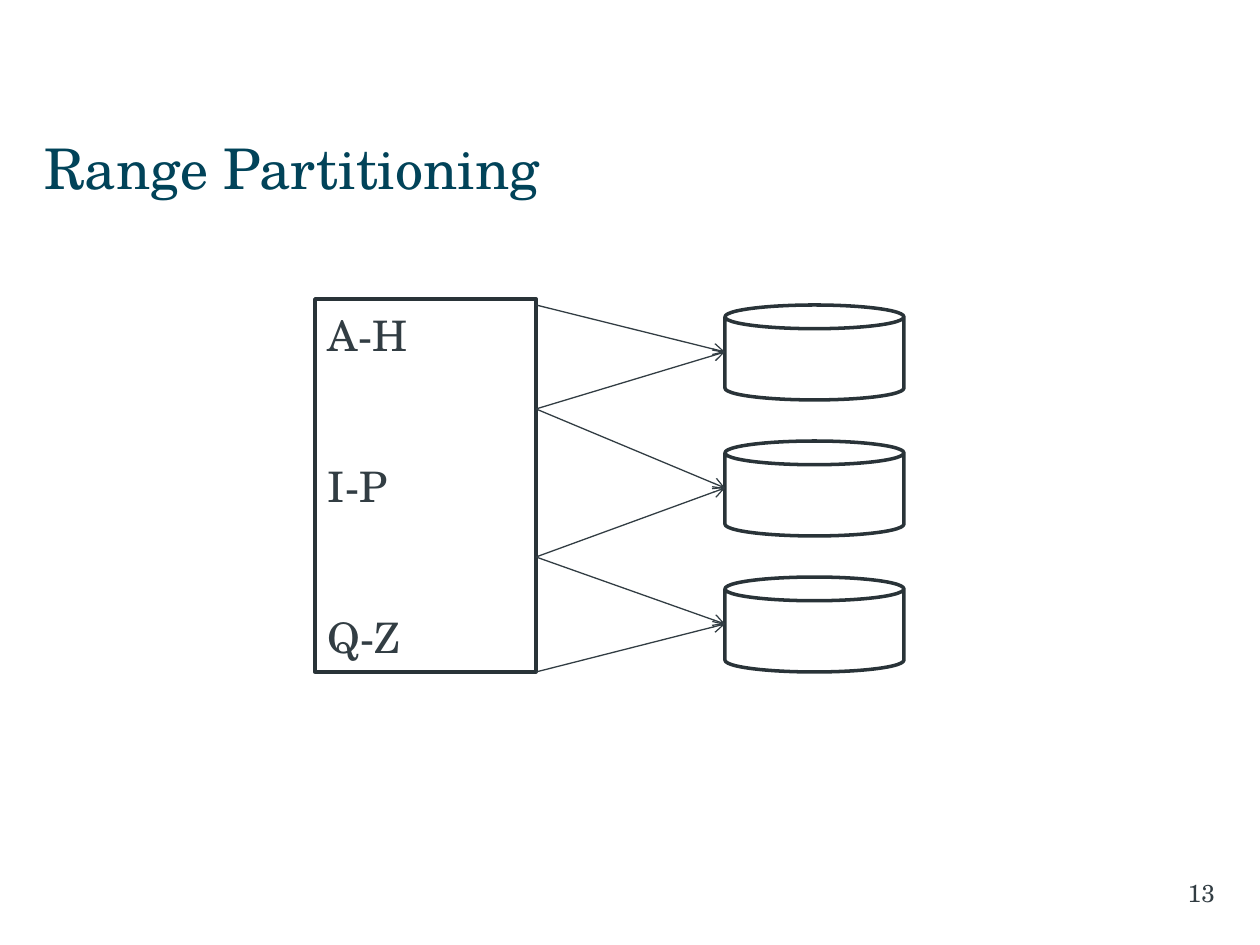
from dataclasses import dataclass
from itertools import pairwise

from lxml.etree import SubElement
from pptx import Presentation
from pptx.dml.color import RGBColor
from pptx.enum.shapes import MSO_CONNECTOR, MSO_SHAPE
from pptx.enum.text import MSO_ANCHOR, MSO_AUTO_SIZE, PP_ALIGN
from pptx.oxml.ns import qn
from pptx.shapes.autoshape import Shape
from pptx.slide import Slide
from pptx.util import Emu, Pt

PIXELS_PER_INCH = 126
FONT = "TeX Gyre Schola"
INK = "323D43"
OUTLINE = "293338"
TITLE_COLOR = "014359"


@dataclass(frozen=True)
class Box:
    left: int
    top: int
    width: int
    height: int

    @property
    def right(self) -> int:
        return self.left + self.width

    @property
    def middle(self) -> int:
        return self.top + self.height // 2


def px(length: int) -> Emu:
    return Emu(round(length * 914400 / PIXELS_PER_INCH))


def color(value: str) -> RGBColor:
    return RGBColor.from_string(value)


def place(shape: Shape, box: Box) -> None:
    shape.left, shape.top = px(box.left), px(box.top)
    shape.width, shape.height = px(box.width), px(box.height)


def write(shape: Shape, *lines: str, size: int, fill: str = INK,
          align: PP_ALIGN = PP_ALIGN.LEFT, gap: float = 0,
          left: int = 13, right: int = 13) -> None:
    frame = shape.text_frame
    frame.word_wrap = True
    frame.auto_size = MSO_AUTO_SIZE.NONE
    frame.vertical_anchor = MSO_ANCHOR.MIDDLE
    frame.margin_left, frame.margin_right = px(left), px(right)
    frame.margin_top = frame.margin_bottom = px(6)
    frame.text = "\n".join(lines)
    for index, paragraph in enumerate(frame.paragraphs):
        paragraph.alignment = align
        paragraph.space_before = Pt(gap if index else 0)
        font = paragraph.runs[0].font
        font.name, font.size = FONT, Pt(size)
        font.color.rgb = color(fill)


def draw_shape(slide: Slide, kind: MSO_SHAPE, box: Box) -> Shape:
    shape = slide.shapes.add_shape(kind, 0, 0, 0, 0)
    place(shape, box)
    shape.shadow.inherit = False
    shape.fill.solid()
    shape.fill.fore_color.rgb = color("FFFFFF")
    shape.line.color.rgb = color(OUTLINE)
    shape.line.width = Pt(2)
    return shape


def draw_arrow(slide: Slide, start: tuple[int, int], end: tuple[int, int]) -> None:
    connector = slide.shapes.add_connector(
        MSO_CONNECTOR.STRAIGHT, *map(px, start), *map(px, end))
    connector.line.color.rgb = color(INK)
    connector.line.width = Pt(0.75)
    SubElement(connector.line._get_or_add_ln(), qn("a:tailEnd"), type="arrow")
    SubElement(connector._element.spPr, qn("a:effectLst"))


def main() -> None:
    presentation = Presentation()
    presentation.slide_width, presentation.slide_height = px(1260), px(945)
    slide = presentation.slides.add_slide(presentation.slide_layouts[5])

    title = slide.shapes.title
    place(title, Box(44, 123, 1171, 89))
    write(title, "Range Partitioning", size=32, fill=TITLE_COLOR, left=0)

    page_number = slide.shapes.add_textbox(0, 0, 0, 0)
    place(page_number, Box(974, 871, 241, 43))
    write(page_number, "13", size=14, align=PP_ALIGN.RIGHT, right=0)

    disks = [Box(725, 305 + 136 * row, 179, 95) for row in range(3)]
    for disk in disks:
        draw_shape(slide, MSO_SHAPE.CAN, disk)

    table = Box(315, 299, 221, 373)
    table_shape = draw_shape(slide, MSO_SHAPE.RECTANGLE, table)
    write(table_shape, "A-H", "I-P", "Q-Z", size=24, gap=57.6)

    boundaries = [305, 409, 557, 672]
    for disk, limits in zip(disks, pairwise(boundaries)):
        for limit in limits:
            draw_arrow(slide, (table.right, limit), (disk.left, disk.middle))

    presentation.save("out.pptx")


if __name__ == "__main__":
    main()
